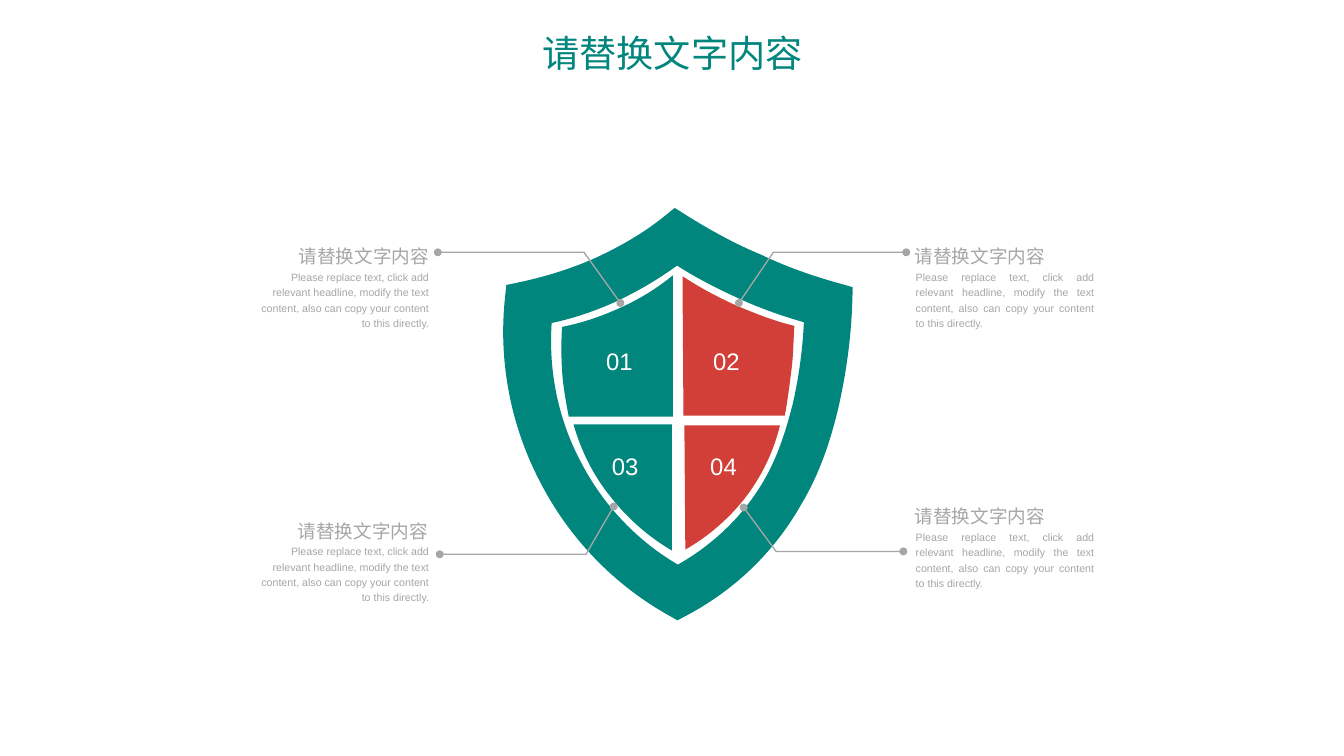
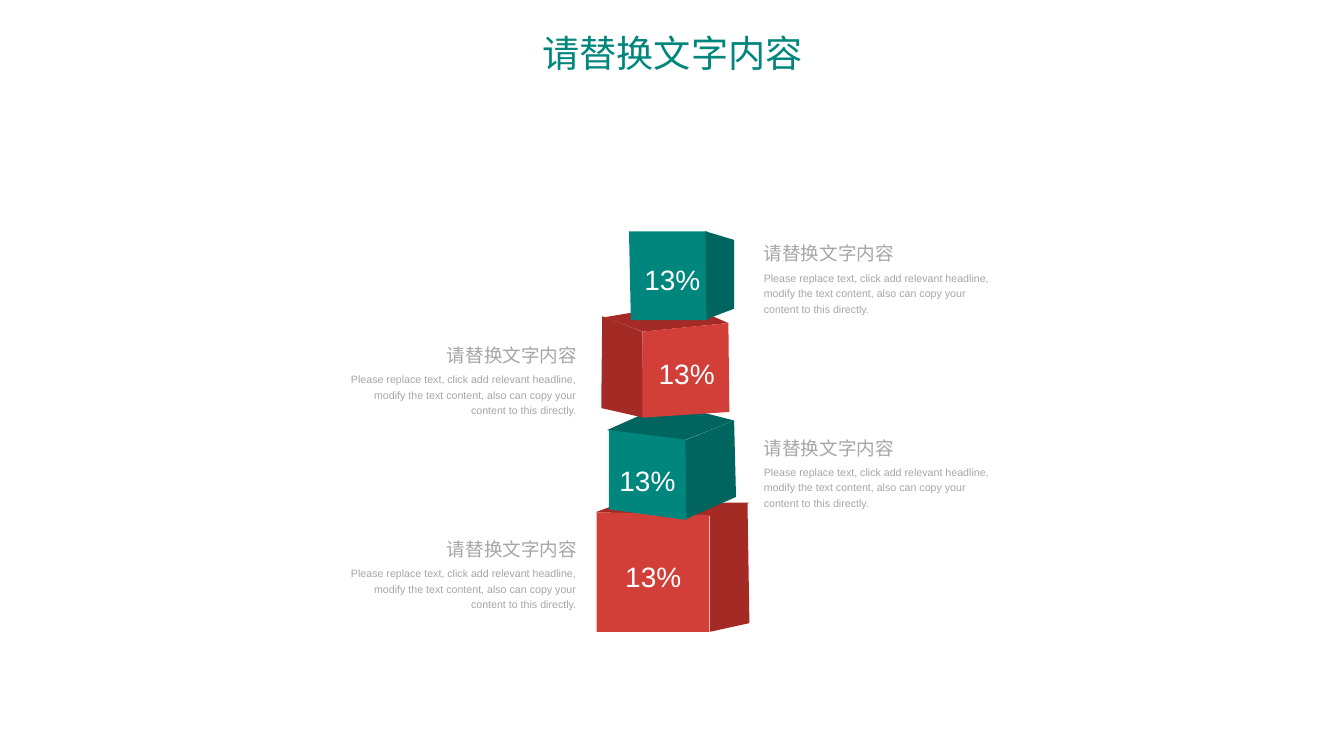
from dataclasses import dataclass

from lxml.etree import SubElement
from pptx import Presentation
from pptx.dml.color import RGBColor
from pptx.enum.text import MSO_ANCHOR, MSO_AUTO_SIZE, PP_ALIGN
from pptx.oxml.ns import qn
from pptx.util import Inches, Pt


@dataclass(frozen=True)
class Theme:
    teal: str = "00867D"
    dark_teal: str = "00655E"
    red: str = "D23E38"
    dark_red: str = "A32A25"
    grey: str = "A6A6A6"
    white: str = "FFFFFF"
    font: str = "Arial"
    chinese_font: str = "Noto Sans CJK SC"
    title_size: float = 28
    heading_size: float = 14
    body_size: float = 8
    number_size: float = 18
    percent_size: float = 21.1
    line_spacing: float = 1.2


THEME = Theme()
TITLE = HEADING = "请替换文字内容"
BODY = ("Please replace text, click add relevant headline, modify the text content, "
        "also can copy your content to this directly.")

# An outline is a start point, then (x, y) for a line or six numbers for a cubic curve.
SHIELD_RINGS = [  # line width, outline
    (24, [(7.07, 2.38), (6.84, 2.57, 6.58, 2.72, 6.3, 2.85), (6.03, 2.97, 5.74, 3.06, 5.45, 3.12),
          (5.38, 3.75, 5.5, 4.39, 5.79, 4.95), (6.08, 5.52, 6.53, 5.99, 7.09, 6.3),
          (7.57, 6.05, 7.97, 5.67, 8.24, 5.19), (8.42, 4.89, 8.53, 4.56, 8.61, 4.22),
          (8.69, 3.87, 8.74, 3.5, 8.75, 3.13), (8.46, 3.05, 8.17, 2.95, 7.9, 2.82),
          (7.61, 2.7, 7.34, 2.55, 7.07, 2.38)]),
    (14, [(7.08, 2.66), (6.87, 2.82, 6.65, 2.95, 6.42, 3.06), (6.18, 3.17, 5.94, 3.25, 5.68, 3.3),
          (5.63, 3.84, 5.73, 4.38, 5.98, 4.86), (6.23, 5.35, 6.61, 5.75, 7.09, 6.02),
          (7.5, 5.8, 7.85, 5.47, 8.08, 5.07), (8.23, 4.81, 8.32, 4.52, 8.39, 4.24),
          (8.46, 3.93, 8.5, 3.62, 8.51, 3.3), (8.26, 3.23, 8.02, 3.15, 7.78, 3.04),
          (7.54, 2.93, 7.3, 2.81, 7.08, 2.66)]),
]
SHIELD_QUARTERS = [  # number, its left and top, colour, outline
    ("01", (6.34, 3.58), THEME.teal,
     [(5.88, 3.42), (6.09, 3.38, 6.29, 3.31, 6.49, 3.22), (6.69, 3.13, 6.87, 3.02, 7.04, 2.88),
      (7.04, 4.36), (5.95, 4.36), (5.92, 4.2, 5.89, 4.04, 5.88, 3.88),
      (5.87, 3.72, 5.87, 3.57, 5.88, 3.42)]),
    ("02", (7.46, 3.58), THEME.red,
     [(7.14, 2.89), (7.32, 3.01, 7.51, 3.11, 7.71, 3.2), (7.9, 3.28, 8.1, 3.36, 8.31, 3.41),
      (8.3, 3.57, 8.3, 3.72, 8.28, 3.87), (8.26, 4.03, 8.24, 4.19, 8.21, 4.35), (7.15, 4.35)]),
    ("03", (6.4, 4.68), THEME.teal,
     [(6, 4.44), (7.03, 4.44), (7.03, 5.76), (6.79, 5.62, 6.57, 5.43, 6.39, 5.2),
      (6.21, 4.98, 6.08, 4.72, 6, 4.44)]),
    ("04", (7.43, 4.68), THEME.red,
     [(7.16, 4.45), (8.16, 4.45), (8.09, 4.74, 7.96, 5, 7.78, 5.23),
      (7.61, 5.44, 7.4, 5.62, 7.17, 5.75)]),
]
SHIELD_CALLOUTS = [  # side, heading edge, text top, leader line
    ("left", 4.49, 2.53, [(6.49, 3.17), (6.11, 2.64), (4.58, 2.64)]),
    ("right", 9.57, 2.53, [(7.73, 3.17), (8.09, 2.64), (9.48, 2.64)]),
    ("left", 4.48, 5.4, [(6.42, 5.3), (6.13, 5.8), (4.6, 5.8)]),
    ("right", 9.57, 5.25, [(7.78, 5.31), (8.12, 5.77), (9.45, 5.77)]),
]
CUBES = [  # bottom cube first: label, its left and top, faces from back to front
    ("13%", (6.54, 5.8), [
        (THEME.dark_red, [(6.23, 5.36), (6.5, 5.26), (7.84, 5.26), (7.46, 5.4)]),
        (THEME.dark_red, [(7.43, 5.39), (7.43, 6.61), (7.84, 6.52), (7.82, 5.26)]),
        (THEME.red, [(6.24, 5.36), (6.24, 6.61), (7.42, 6.61), (7.42, 5.39)])]),
    ("13%", (6.48, 4.79), [
        (THEME.dark_teal, [(6.35, 4.5), (6.98, 4.22), (7.68, 4.4), (7.15, 4.61)]),
        (THEME.dark_teal, [(7.16, 4.61), (7.68, 4.4), (7.7, 5.2), (7.18, 5.43)]),
        (THEME.teal, [(6.37, 4.5), (6.37, 5.33), (7.18, 5.44), (7.17, 4.6)])]),
    ("13%", (6.89, 3.68), [
        (THEME.dark_red, [(6.32, 3.32), (7.16, 3.18), (7.62, 3.38), (6.73, 3.47)]),
        (THEME.dark_red, [(6.3, 3.31), (6.72, 3.47), (6.73, 4.37), (6.29, 4.27)]),
        (THEME.red, [(7.62, 3.38), (6.72, 3.47), (6.72, 4.37), (7.63, 4.31)])]),
    ("13%", (6.74, 2.69), [
        (THEME.teal, [(6.58, 2.42), (7.4, 2.42), (7.4, 3.35), (6.6, 3.35)]),
        (THEME.dark_teal, [(7.38, 2.42), (7.68, 2.51), (7.68, 3.23), (7.39, 3.34)])]),
]
CUBE_CALLOUTS = [("right", 2.49), ("left", 3.55), ("right", 4.52), ("left", 5.58)]


def add_text(slide, text, left, top, width, height, *, size, color, font=THEME.font,
             align=PP_ALIGN.LEFT, anchor=MSO_ANCHOR.TOP, wrap=True, margin=0):
    box = slide.shapes.add_textbox(Inches(left), Inches(top), Inches(width), Inches(height))
    frame = box.text_frame
    frame.word_wrap = wrap
    frame.auto_size = MSO_AUTO_SIZE.SHAPE_TO_FIT_TEXT
    frame.vertical_anchor = anchor
    frame.margin_left = frame.margin_right = Inches(margin)
    frame.margin_top = frame.margin_bottom = Inches(margin / 2)
    paragraph = frame.paragraphs[0]
    paragraph.alignment = align
    paragraph.line_spacing = THEME.line_spacing
    run = paragraph.add_run()
    run.text = text
    run.font.name = font
    run.font.size = Pt(size)
    run.font.color.rgb = RGBColor.from_string(color)
    SubElement(run.font._element, qn("a:ea"), typeface=THEME.chinese_font)


def flatten(outline, steps=16):
    """Return points along an outline, from which its bounds follow."""
    points = [outline[0]]
    for segment in outline[1:]:
        if len(segment) == 2:
            points.append(segment)
            continue
        corners = [points[-1], segment[:2], segment[2:4], segment[4:]]
        for step in range(1, steps + 1):
            t = step / steps
            weights = ((1 - t) ** 3, 3 * t * (1 - t) ** 2, 3 * t ** 2 * (1 - t), t ** 3)
            points.append(tuple(sum(weight * corner[axis] for weight, corner in zip(weights, corners))
                                for axis in (0, 1)))
    return points


def draw_curves(shape, outline, closed):
    """Replace the straight steps of a freeform by the outline's lines and cubic curves."""
    drawing = shape._element.find(".//" + qn("a:path"))
    for step in list(drawing)[1:]:
        drawing.remove(step)
    for segment in outline[1:]:
        tag = "a:lnTo" if len(segment) == 2 else "a:cubicBezTo"
        element = SubElement(drawing, qn(tag))
        for x, y in zip(segment[::2], segment[1::2]):
            SubElement(element, qn("a:pt"), x=str(Inches(x) - shape.left), y=str(Inches(y) - shape.top))
    if closed:
        SubElement(drawing, qn("a:close"))


def add_outline(slide, outline, *, fill=None, line=None, line_width=1, closed=True, dots=False):
    if closed and outline[-1][-2:] != outline[0]:
        outline = outline + [outline[0]]
    points = [(Inches(x), Inches(y)) for x, y in flatten(outline)]
    builder = slide.shapes.build_freeform(*points[0])
    builder.add_line_segments(points[1:], close=closed)
    shape = builder.convert_to_shape()
    draw_curves(shape, outline, closed)
    shape.shadow.inherit = False
    if fill:
        shape.fill.solid()
        shape.fill.fore_color.rgb = RGBColor.from_string(fill)
    else:
        shape.fill.background()
    if not line:
        shape.line.fill.background()
        return
    shape.line.color.rgb = RGBColor.from_string(line)
    shape.line.width = Pt(line_width)
    line_element = shape.line._get_or_add_ln()
    SubElement(line_element, qn("a:miter"), lim="800000")
    if dots:
        for end in ("a:headEnd", "a:tailEnd"):
            SubElement(line_element, qn(end), type="oval")


def add_callout(slide, side, heading_edge, body_edge, top, *, heading_width, body_width,
                body_height, body_gap, body_align, **heading_format):
    """Set heading and body against their edges: text to the left or the right of them."""
    on_left = side == "left"
    rows = [(HEADING, heading_edge, top, heading_width, 0.26, THEME.heading_size,
             PP_ALIGN.LEFT, heading_format),
            (BODY, body_edge, top + body_gap, body_width, body_height, THEME.body_size,
             body_align, {})]
    for text, edge, row_top, width, height, size, align, extra in rows:
        add_text(slide, text, edge - width if on_left else edge, row_top, width, height,
                 size=size, color=THEME.grey, align=PP_ALIGN.RIGHT if on_left else align, **extra)


def add_label(slide, text, position, width, height, size):
    add_text(slide, text, *position, width, height, size=size, color=THEME.white,
             anchor=MSO_ANCHOR.MIDDLE, wrap=False)


def add_titled_slide(presentation):
    slide = presentation.slides.add_slide(presentation.slide_layouts[6])
    add_text(slide, TITLE, 5.31, 0.17, 3.45, 0.67, size=THEME.title_size, color=THEME.teal,
             font=THEME.chinese_font, align=PP_ALIGN.CENTER, anchor=MSO_ANCHOR.MIDDLE, margin=0.1)
    return slide


def build_shield_slide(presentation):
    slide = add_titled_slide(presentation)
    for line_width, outline in SHIELD_RINGS:
        add_outline(slide, outline, line=THEME.teal, line_width=line_width)
    for number, position, color, outline in SHIELD_QUARTERS:
        add_outline(slide, outline, fill=color)
        add_label(slide, number, position, 0.28, 0.33, THEME.number_size)
    body_edges = {"left": 4.49, "right": 9.58}
    body_widths = {"left": 1.79, "right": 1.87}
    for side, heading_edge, top, leader in SHIELD_CALLOUTS:
        add_outline(slide, leader, line=THEME.grey, closed=False, dots=True)
        add_callout(slide, side, heading_edge, body_edges[side], top, heading_width=1.37,
                    body_width=body_widths[side], body_height=0.63, body_gap=0.28,
                    body_align=PP_ALIGN.JUSTIFY, anchor=MSO_ANCHOR.MIDDLE, wrap=False)


def build_cubes_slide(presentation):
    slide = add_titled_slide(presentation)
    for label, position, faces in CUBES:
        for color, outline in faces:
            add_outline(slide, outline, fill=color)
        add_label(slide, label, position, 0.59, 0.39, THEME.percent_size)
    heading_edges = {"left": 6.04, "right": 7.99}
    body_edges = {"left": 6.03, "right": 7.99}
    for side, top in CUBE_CALLOUTS:
        add_callout(slide, side, heading_edges[side], body_edges[side], top, heading_width=1.47,
                    body_width=2.41, body_height=0.47, body_gap=0.33, body_align=PP_ALIGN.LEFT)


def main():
    presentation = Presentation()
    presentation.slide_width = Inches(14.06)
    presentation.slide_height = Inches(7.91)
    build_shield_slide(presentation)
    build_cubes_slide(presentation)
    presentation.save("out.pptx")


if __name__ == "__main__":
    main()
